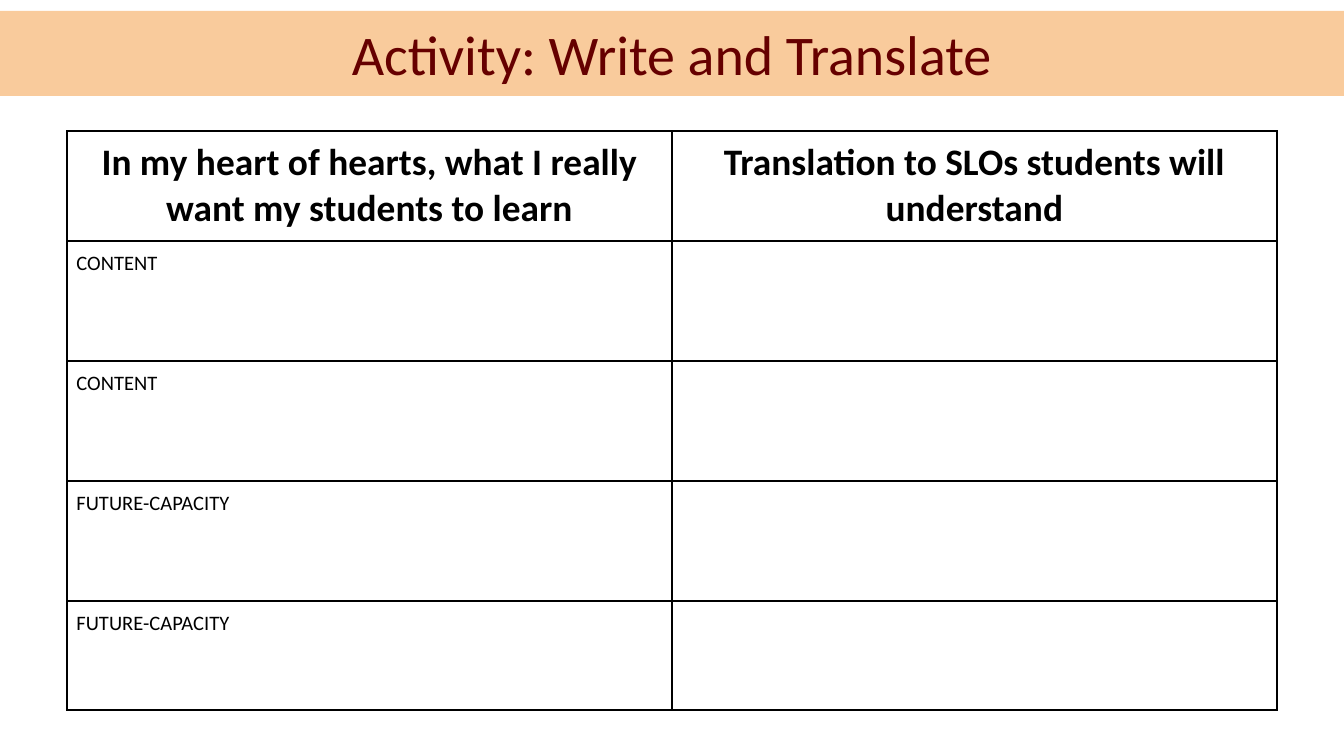
import pptx
import pptx.dml.color
import pptx.enum.shapes
import pptx.enum.text
import pptx.oxml
import pptx.oxml.ns
import pptx.util

EMU_PER_PX = 914400 / 134.4
ALIGN = pptx.enum.text.PP_ALIGN
MIDDLE = pptx.enum.text.MSO_ANCHOR.MIDDLE


def px(length):
    return pptx.util.Emu(round(length * EMU_PER_PX))


def add_text(text_frame, text, size, color, alignment, bold=False):
    paragraph = text_frame.paragraphs[0]
    paragraph.alignment = alignment
    run = paragraph.add_run()
    run.text = text
    run.font.name = "Calibri"
    run.font.size = pptx.util.Pt(size)
    run.font.bold = bold
    run.font.color.rgb = pptx.dml.color.RGBColor.from_string(color)


presentation = pptx.Presentation()
presentation.slide_width = px(1344)
presentation.slide_height = px(756)
slide = presentation.slides.add_slide(presentation.slide_layouts[6])

# Title band
band = slide.shapes.add_shape(
    pptx.enum.shapes.MSO_SHAPE.RECTANGLE, px(0), px(11), px(1344), px(85))
band.shadow.inherit = False
band.fill.solid()
band.fill.fore_color.rgb = pptx.dml.color.RGBColor.from_string("F9CB9C")
band.line.fill.background()
band.text_frame.word_wrap = True
band.text_frame.vertical_anchor = MIDDLE
add_text(band.text_frame, "Activity: Write and Translate", 30, "660000", ALIGN.CENTER)

# Worksheet table
rows = [
    ("In my heart of hearts, what I really want my students to learn",
     "Translation to SLOs students will understand"),
    ("CONTENT", ""),
    ("CONTENT", ""),
    ("FUTURE-CAPACITY", ""),
    ("FUTURE-CAPACITY", ""),
]
row_heights = [110, 120, 120, 120, 109]
column_width = 605

table = slide.shapes.add_table(
    len(rows), 2, px(67), px(131), px(2 * column_width), px(sum(row_heights))).table
table.first_row = False
table.horz_banding = False
for column in table.columns:
    column.width = px(column_width)

for row_index, (texts, height) in enumerate(zip(rows, row_heights)):
    table.rows[row_index].height = px(height)
    is_header = row_index == 0
    for column_index, text in enumerate(texts):
        cell = table.cell(row_index, column_index)
        cell.margin_left = cell.margin_right = pptx.util.Inches(0.07)
        cell.margin_top = cell.margin_bottom = pptx.util.Inches(0.07)
        properties = cell._tc.get_or_add_tcPr()
        for side in ("lnL", "lnR", "lnT", "lnB"):
            properties.append(pptx.oxml.parse_xml(
                f'<a:{side} {pptx.oxml.ns.nsdecls("a")} w="{pptx.util.Pt(1)}">'
                '<a:solidFill><a:srgbClr val="000000"/></a:solidFill>'
                f'</a:{side}>'))
        cell.fill.background()
        if text:
            add_text(cell.text_frame, text, 20 if is_header else 11, "000000",
                     ALIGN.CENTER if is_header else ALIGN.LEFT, bold=is_header)

presentation.save("out.pptx")
